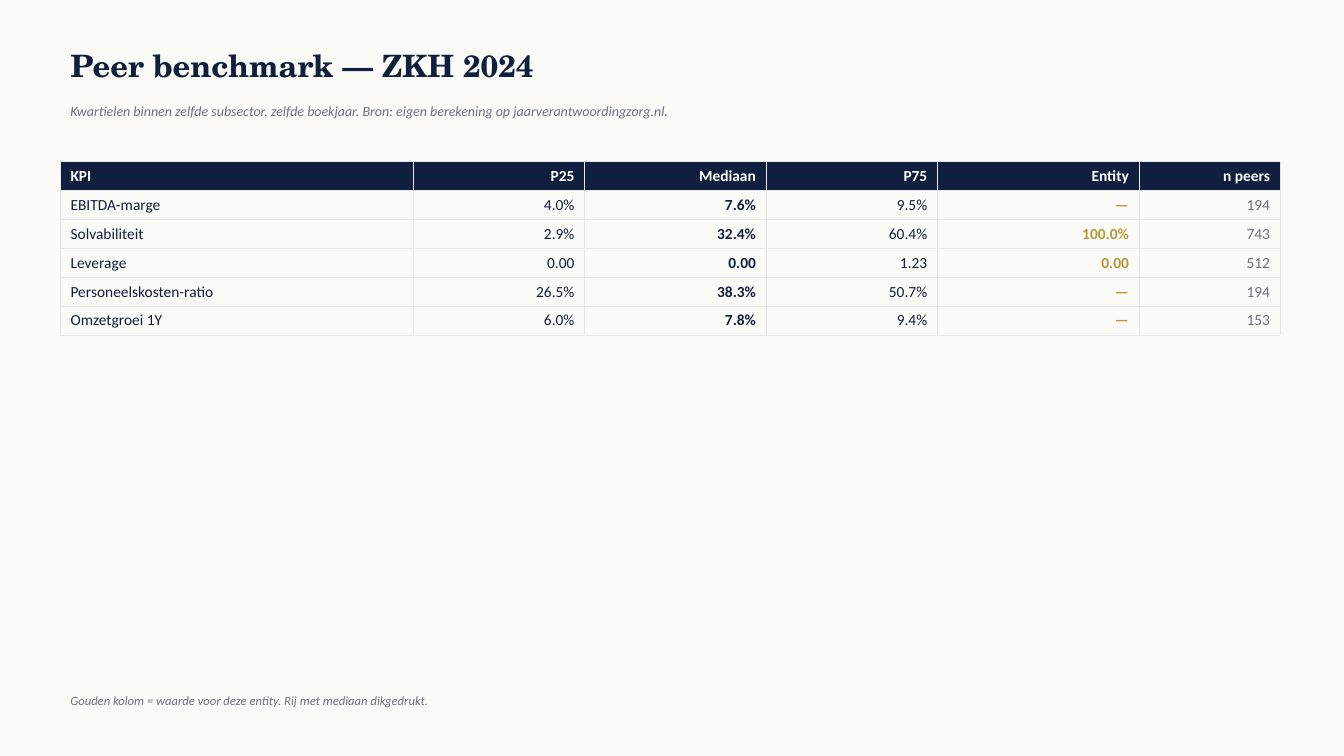
from lxml import etree
from pptx import Presentation
from pptx.dml.color import RGBColor
from pptx.enum import text
from pptx.oxml import ns
from pptx.util import Pt

COLORS = {"paper": "FAFAF7", "navy": "0F1F3D", "grey": "6B7280",
          "gold": "B8973B", "white": "FFFFFF", "rule": "E5E7EB"}
HEADING_FONT, BODY_FONT = "TeX Gyre Schola", "Calibri"
LEFT, TEXT_WIDTH = 43.2, 864
ROW_HEIGHT = 20.7

# Column: heading, width, body colour, bold body
COLUMNS = [("KPI", 252, "navy", False), ("P25", 122.4, "navy", False),
           ("Mediaan", 129.6, "navy", True), ("P75", 122.4, "navy", False),
           ("Entity", 144, "gold", True), ("n peers", 100.8, "grey", False)]
BENCHMARKS = [
    ("EBITDA-marge", "4.0%", "7.6%", "9.5%", "—", "194"),
    ("Solvabiliteit", "2.9%", "32.4%", "60.4%", "100.0%", "743"),
    ("Leverage", "0.00", "0.00", "1.23", "0.00", "512"),
    ("Personeelskosten-ratio", "26.5%", "38.3%", "50.7%", "—", "194"),
    ("Omzetgroei 1Y", "6.0%", "7.8%", "9.4%", "—", "153"),
]


def rgb(color):
    return RGBColor.from_string(COLORS[color])


class SlideBuilder:
    def __init__(self, slide):
        self.slide = slide
        background = slide.background.fill
        background.solid()
        background.fore_color.rgb = rgb("paper")

    def add_styled_run(self, paragraph, content, color, **formats):
        run = paragraph.add_run()
        run.text = content
        for name, value in {"name": BODY_FONT, **formats}.items():
            setattr(run.font, name, value)
        run.font.color.rgb = rgb(color)

    def text_box(self, top, height, content, color, **formats):
        shape = self.slide.shapes.add_textbox(
            Pt(LEFT), Pt(top), Pt(TEXT_WIDTH), Pt(height))
        frame = shape.text_frame
        frame.word_wrap = True
        frame.vertical_anchor = text.MSO_ANCHOR.MIDDLE
        self.add_styled_run(frame.paragraphs[0], content, color, **formats)

    def borders(self, cell):
        properties = cell._tc.get_or_add_tcPr()
        for side in ("lnL", "lnR", "lnT", "lnB"):
            line = etree.SubElement(properties, ns.qn(f"a:{side}"), w=str(Pt(0.5)))
            fill = etree.SubElement(line, ns.qn("a:solidFill"))
            etree.SubElement(fill, ns.qn("a:srgbClr"), val=COLORS["rule"])

    def table(self, top, columns, rows):
        width = sum(column[1] for column in columns)
        row_count = len(rows) + 1
        table = self.slide.shapes.add_table(
            row_count, len(columns), Pt(LEFT), Pt(top),
            Pt(width), Pt(ROW_HEIGHT * row_count)).table
        table.horz_banding = False
        for row in table.rows:
            row.height = Pt(ROW_HEIGHT)
        for c, (heading, column_width, color, bold) in enumerate(columns):
            table.columns[c].width = Pt(column_width)
            for r, content in enumerate([heading] + [row[c] for row in rows]):
                cell = table.cell(r, c)
                self.borders(cell)
                is_header = r == 0
                if is_header:
                    cell.fill.solid()
                    cell.fill.fore_color.rgb = rgb("navy")
                else:
                    cell.fill.background()
                paragraph = cell.text_frame.paragraphs[0]
                if c > 0:
                    paragraph.alignment = text.PP_ALIGN.RIGHT
                self.add_styled_run(paragraph, content, "white" if is_header else color,
                                    size=Pt(11), bold=is_header or bold)


def main():
    presentation = Presentation()
    presentation.slide_width, presentation.slide_height = Pt(960), Pt(540)
    builder = SlideBuilder(presentation.slides.add_slide(presentation.slide_layouts[6]))

    # Title and source line
    builder.text_box(28.8, 36, "Peer benchmark — ZKH 2024", "navy",
                     name=HEADING_FONT, size=Pt(22), bold=True)
    builder.text_box(68.4, 21.6, "Kwartielen binnen zelfde subsector, zelfde boekjaar. "
                     "Bron: eigen berekening op jaarverantwoordingzorg.nl.",
                     "grey", size=Pt(10), italic=True)

    # Benchmark table
    builder.table(115.2, COLUMNS, BENCHMARKS)

    # Footnote
    builder.text_box(489.6, 21.6, "Gouden kolom = waarde voor deze entity. "
                     "Rij met mediaan dikgedrukt.", "grey", size=Pt(9), italic=True)

    presentation.save("out.pptx")


if __name__ == "__main__":
    main()
